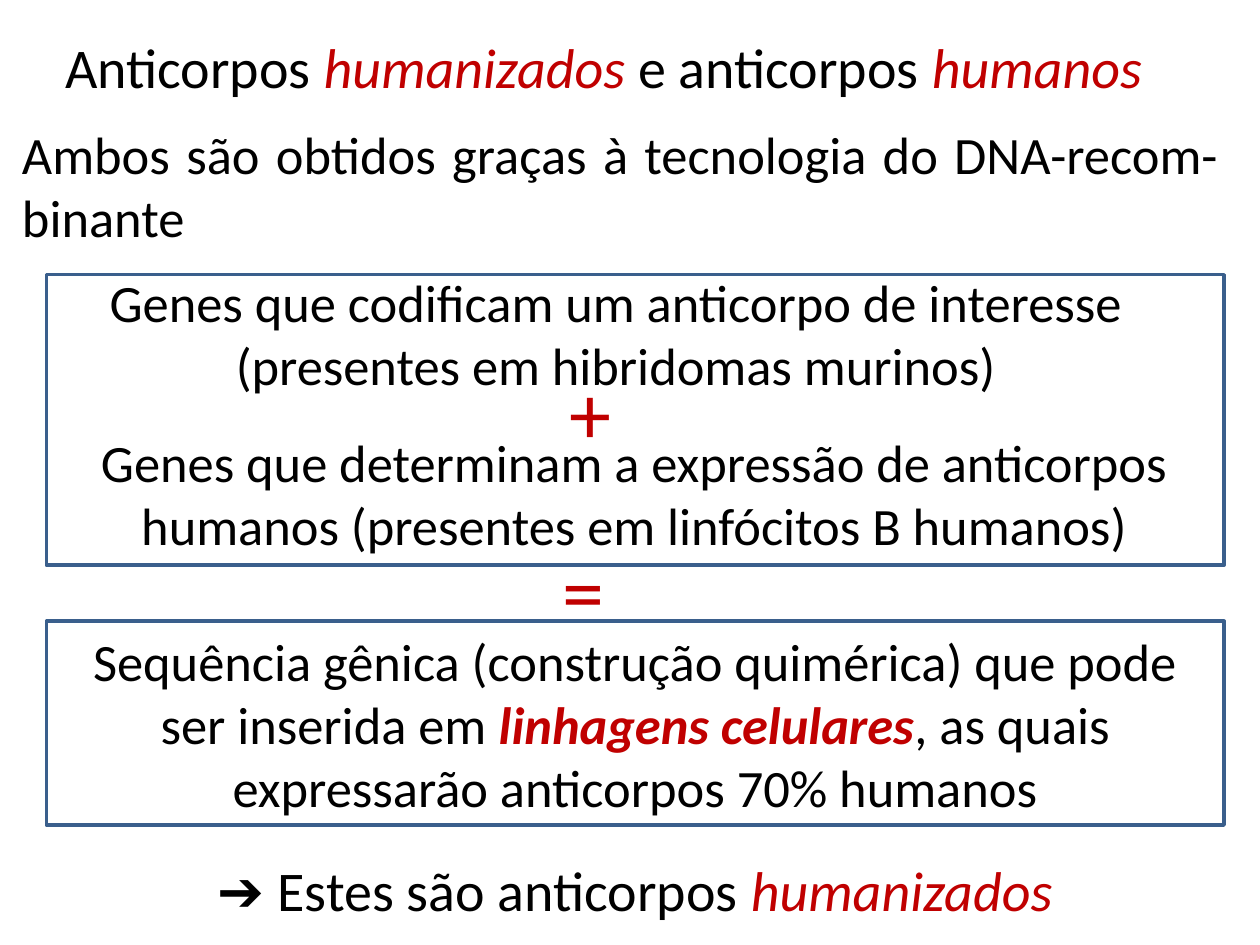
from pptx import Presentation
from pptx.dml.color import RGBColor
from pptx.enum.shapes import MSO_SHAPE
from pptx.enum.text import MSO_ANCHOR, MSO_AUTO_SIZE, PP_ALIGN
from pptx.util import Pt

LEFT, CENTER, JUSTIFY = PP_ALIGN.LEFT, PP_ALIGN.CENTER, PP_ALIGN.JUSTIFY
TOP, MIDDLE = MSO_ANCHOR.TOP, MSO_ANCHOR.MIDDLE
NO_FIT = MSO_AUTO_SIZE.NONE
RECTANGLE = MSO_SHAPE.RECTANGLE
TITLE_ONLY = 5

COLORS = {"text": "000000", "accent": "C00000", "frame": "3A5F8C"}
FONT = "Calibri"
HEADING, BODY, SYMBOL = 32, 30, 48


class SlideBuilder:
    """Holds the text style and the slide being built."""

    def __init__(self, slide):
        self.slide = slide

    def color(self, name):
        return RGBColor.from_string(COLORS[name])

    def fill_text(self, shape, spans, size, align, anchor=TOP):
        """Each span is (text, style); style may hold 'accent', 'italic', 'bold'."""
        frame = shape.text_frame
        frame.word_wrap = True
        frame.auto_size = NO_FIT
        frame.vertical_anchor = anchor
        para = frame.paragraphs[0]
        para.alignment = align
        para.font.name = FONT
        para.font.size = Pt(size)
        for text, style in spans:
            span = para.add_run()
            span.text = text
            span.font.color.rgb = self.color("accent" if "accent" in style else "text")
            if "italic" in style:
                span.font.italic = True
            if "bold" in style:
                span.font.bold = True

    def title(self, bounds, spans):
        title = self.slide.shapes.title
        title.left, title.top, title.width, title.height = map(Pt, bounds)
        self.fill_text(title, spans, HEADING, LEFT)

    def text(self, bounds, spans, size=BODY, align=CENTER):
        box = self.slide.shapes.add_textbox(*map(Pt, bounds))
        self.fill_text(box, spans, size, align)

    def frame(self, bounds, spans=()):
        box = self.slide.shapes.add_shape(RECTANGLE, *map(Pt, bounds))
        box.shadow.inherit = False
        box.fill.background()
        box.line.color.rgb = self.color("frame")
        box.line.width = Pt(2)
        if spans:
            self.fill_text(box, spans, BODY, CENTER, MIDDLE)


def main():
    deck = Presentation()
    deck.slide_width, deck.slide_height = Pt(720), Pt(540)
    page = SlideBuilder(deck.slides.add_slide(deck.slide_layouts[TITLE_ONLY]))

    # Heading and introduction
    page.title((30, 15, 648, 53), [
        ("Anticorpos ", ""),
        ("humanizados", "accent italic"),
        (" e anticorpos ", ""),
        ("humanos", "accent italic"),
    ])
    text_width, text_height = 698, 80
    page.text((5.5, 66, text_width, text_height),
              [("Ambos são obtidos graças à tecnologia do DNA-recom-binante", "")],
              align=JUSTIFY)

    # The two gene sources, framed together
    frame_left, frame_width = 26.5, 673
    page.frame((frame_left, 157, frame_width, 166))
    page.text((3, 151, text_width, text_height),
              [("Genes que codificam um anticorpo de interesse "
                "(presentes em hibridomas murinos)", "")])
    page.text((13.5, 242, text_width, text_height),
              [("Genes que determinam a expressão de anticorpos "
                "humanos (presentes em linfócitos B humanos)", "")])

    # Operators of the equation
    for symbol, top, align in (("+", 202.5, CENTER), ("=", 304, LEFT)):
        page.text((314.5, top, 45.5, 65.5), [(symbol, "accent")], SYMBOL, align)

    # Resulting sequence
    page.frame((frame_left, 355, frame_width, 116.5), [
        ("Sequência gênica (construção quimérica) que pode ser inserida em ", ""),
        ("linhagens celulares", "accent bold italic"),
        (", as quais expressarão anticorpos 70% humanos", ""),
    ])

    # Conclusion
    page.text((frame_left, 485.5, frame_width, 46), [
        ("➔ Estes são anticorpos ", ""),
        ("humanizados", "accent italic"),
    ], HEADING)

    deck.save("out.pptx")


if __name__ == "__main__":
    main()
